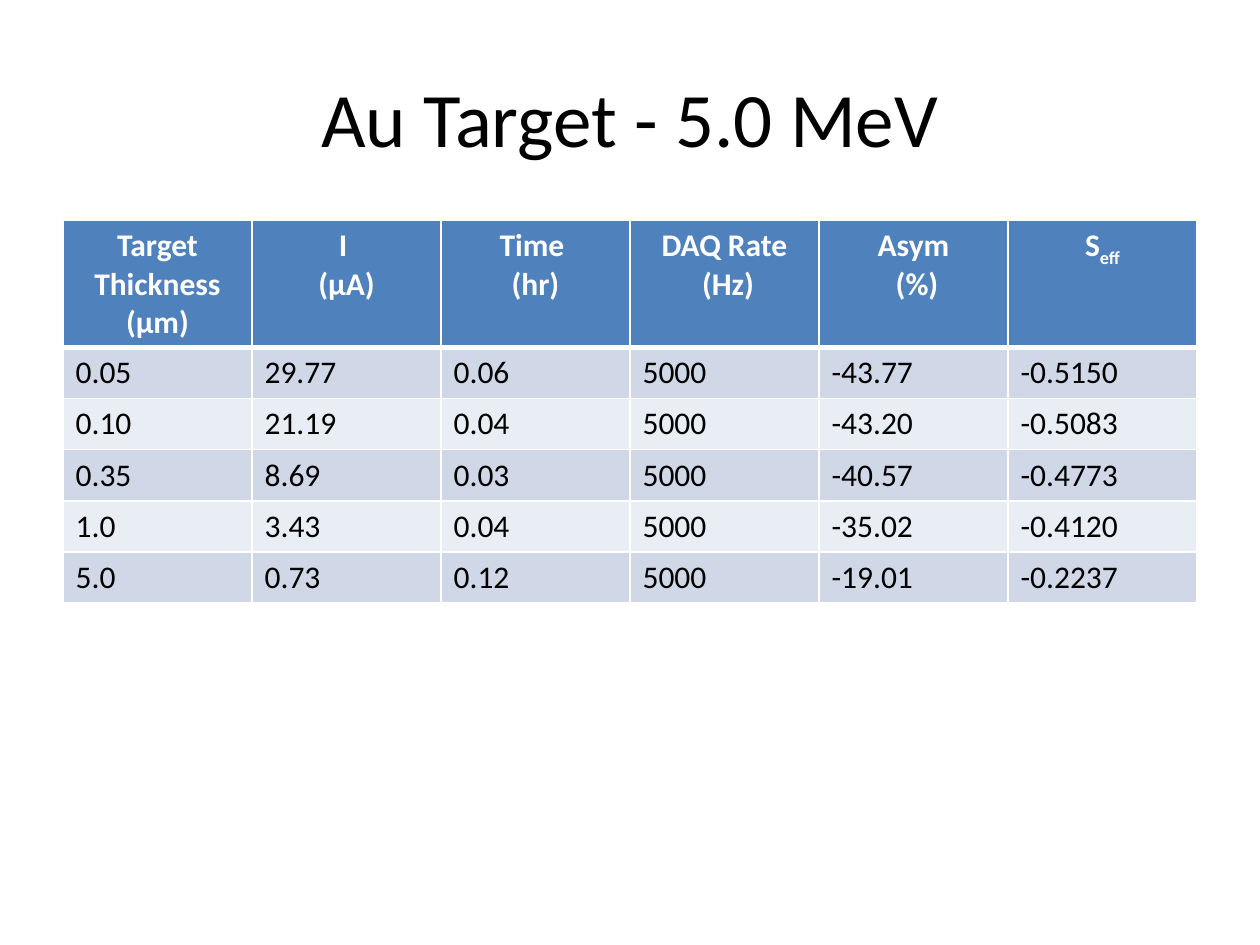
from lxml.etree import SubElement
from pptx import Presentation
from pptx.dml.color import RGBColor
from pptx.enum.text import MSO_ANCHOR as Anchor, PP_ALIGN as Align
from pptx.oxml.ns import qn
from pptx.util import Pt

# Content: each header is a list of paragraphs, each paragraph a list of runs
TITLE = "Au Target - 5.0 MeV"
SUBSCRIPT = "eff"
HEADERS = [
    [["Target Thickness (µm)"]],
    [["I "], ["(µA)"]],
    [["Time "], ["(hr)"]],
    [["DAQ Rate"], [" (Hz)"]],
    [["Asym"], [" (%)"]],
    [["S", SUBSCRIPT]],
]
ROWS = [
    ["0.05", "29.77", "0.06", "5000", "-43.77", "-0.5150"],
    ["0.10", "21.19", "0.04", "5000", "-43.20", "-0.5083"],
    ["0.35", "8.69", "0.03", "5000", "-40.57", "-0.4773"],
    ["1.0", "3.43", "0.04", "5000", "-35.02", "-0.4120"],
    ["5.0", "0.73", "0.12", "5000", "-19.01", "-0.2237"],
]

# Style and layout, in points
COLORS = {"text": "000000", "white": "FFFFFF", "header": "4F81BD",
          "odd": "D0D8E8", "even": "E9EDF4"}
FONT = "Calibri"
LEFT, WIDTH = 36, 648
TABLE_TOP, HEADER_HEIGHT, ROW_HEIGHT = 126, 72.6, 29.2
THIN, THICK = 1, 3


def add_span(para, text, size, color, bold=False):
    span = para.add_run()
    span.text = text
    span.font.name = FONT
    span.font.size = Pt(size)
    span.font.bold = bold
    span.font.color.rgb = RGBColor.from_string(COLORS[color])
    return span


def set_borders(cell, top, bottom):
    properties = cell._tc.get_or_add_tcPr()
    for side, width in (("L", THIN), ("R", THIN), ("T", top), ("B", bottom)):
        line = SubElement(properties, qn(f"a:ln{side}"), w=str(Pt(width)))
        fill = SubElement(line, qn("a:solidFill"))
        SubElement(fill, qn("a:srgbClr"), val=COLORS["white"])


def fill_cell(cell, paragraphs, fill, color, align, bold=False):
    cell.fill.solid()
    cell.fill.fore_color.rgb = RGBColor.from_string(COLORS[fill])
    frame = cell.text_frame
    for index, spans in enumerate(paragraphs):
        para = frame.add_paragraph() if index else frame.paragraphs[0]
        para.alignment = align
        for text in spans:
            span = add_span(para, text, 18, color, bold)
            if text == SUBSCRIPT:
                span.font._element.set("baseline", "-25000")


deck = Presentation()
deck.slide_width, deck.slide_height = Pt(720), Pt(540)
page = deck.slides.add_slide(deck.slide_layouts[6])

# Title
box = page.shapes.add_textbox(Pt(LEFT), Pt(21.6), Pt(WIDTH), Pt(90))
box.text_frame.word_wrap = True
box.text_frame.vertical_anchor = Anchor.MIDDLE
title = box.text_frame.paragraphs[0]
title.alignment = Align.CENTER
add_span(title, TITLE, 44, "text")

# Table grid
heights = [HEADER_HEIGHT] + [ROW_HEIGHT] * len(ROWS)
table = page.shapes.add_table(len(heights), len(HEADERS), Pt(LEFT), Pt(TABLE_TOP),
                              Pt(WIDTH), Pt(sum(heights))).table
for row, height in zip(table.rows, heights):
    row.height = Pt(height)
for column in table.columns:
    column.width = Pt(WIDTH / len(HEADERS))

# Header row
for column, paragraphs in enumerate(HEADERS):
    cell = table.cell(0, column)
    set_borders(cell, THIN, THICK)
    fill_cell(cell, paragraphs, "header", "white", Align.CENTER, bold=True)

# Measurement rows
for row, values in enumerate(ROWS, start=1):
    for column, value in enumerate(values):
        cell = table.cell(row, column)
        set_borders(cell, THICK if row == 1 else THIN, THIN)
        fill_cell(cell, [[value]], "odd" if row % 2 else "even", "text", Align.LEFT)

deck.save("out.pptx")
